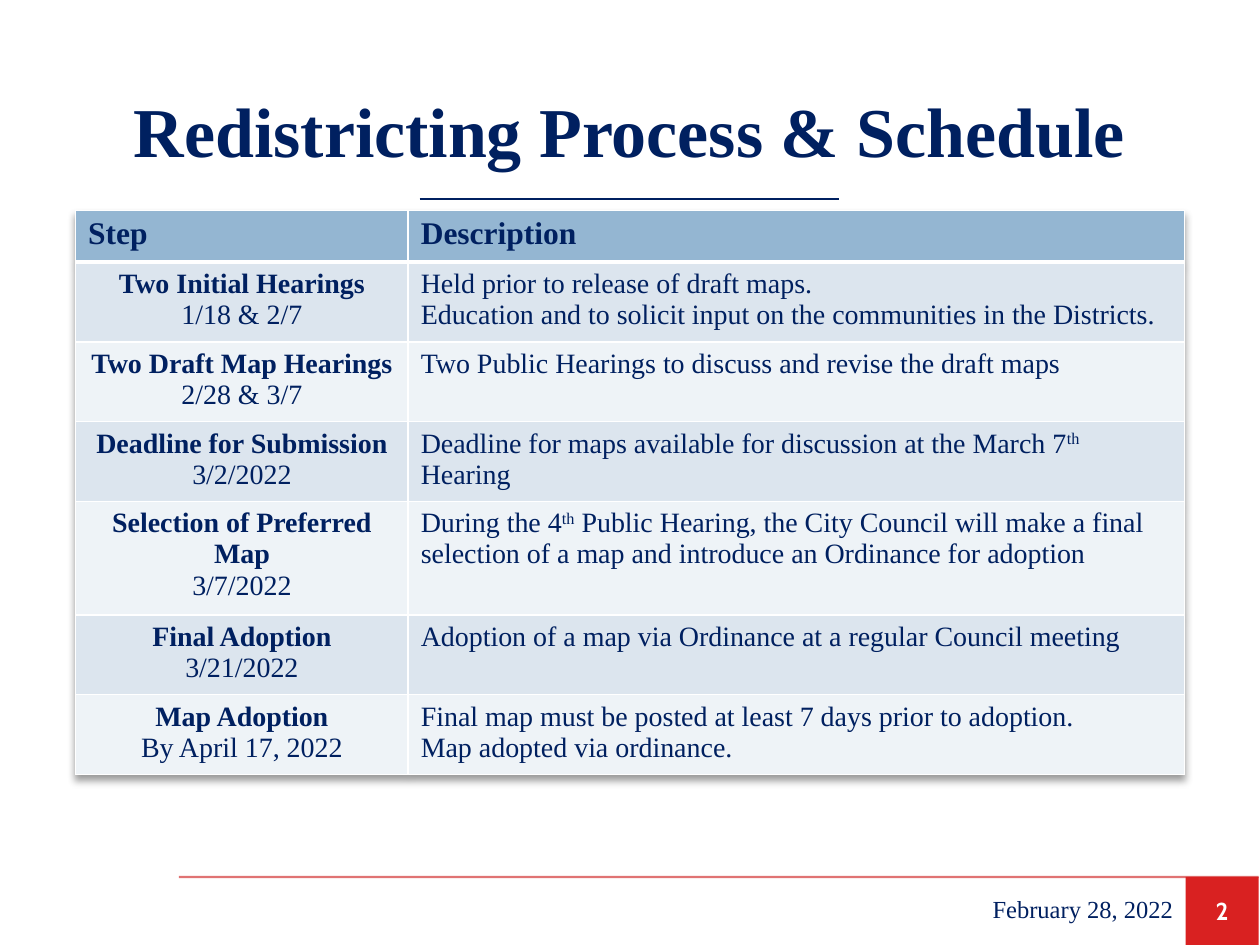
from lxml import etree
from pptx import Presentation
from pptx.dml.color import RGBColor
from pptx.enum.shapes import MSO_CONNECTOR as Connector, MSO_SHAPE as Shape
from pptx.enum.text import MSO_ANCHOR as Anchor, PP_ALIGN as Align
from pptx.oxml import parse_xml
from pptx.oxml.ns import nsdecls, qn
from pptx.util import Inches, Pt

COLORS = {
    "navy": "002060", "white": "FFFFFF", "red": "D92121", "rule": "C80000",
    "header": "94B6D2", "odd": "DCE5EE", "even": "EEF3F7",
}
SERIF = "Times New Roman"

# Each step: name, date, description paragraphs; ^ marks superscript
STEPS = [
    ("Two Initial Hearings", "1/18 & 2/7",
     ["Held prior to release of draft maps.",
      "Education and to solicit input on the communities in the Districts."]),
    ("Two Draft Map Hearings", "2/28 & 3/7",
     ["Two Public Hearings to discuss and revise the draft maps"]),
    ("Deadline for Submission", "3/2/2022",
     ["Deadline for maps available for discussion at the March 7^th^ Hearing"]),
    ("Selection of Preferred Map", "3/7/2022",
     ["During the 4^th^ Public Hearing, the City Council will make a final "
      "selection of a map and introduce an Ordinance for adoption"]),
    ("Final Adoption", "3/21/2022",
     ["Adoption of a map via Ordinance at a regular Council meeting"]),
    ("Map Adoption", "By April 17, 2022",
     ["Final map must be posted at least 7 days prior to adoption.",
      "Map adopted via ordinance."]),
]
ROW_HEIGHTS = [0.41, 0.59, 0.59, 0.59, 0.84, 0.59, 0.59]
COLUMN_WIDTHS = [2.64, 6.16]


def rgb(name):
    return RGBColor.from_string(COLORS[name])


class SlideBuilder:
    def __init__(self, slide):
        self.slide = slide
        self.format = {"name": SERIF, "size": Pt(16), "bold": False}

    def fill_text(self, frame, lines, align=Align.LEFT, color="navy"):
        """Fill a text frame with (text, format changes) paragraphs."""
        frame.word_wrap = True
        for index, (text, changes) in enumerate(lines):
            paragraph = frame.paragraphs[0] if index == 0 else frame.add_paragraph()
            paragraph.alignment = align
            for part, piece in enumerate(text.split("^")):
                run = paragraph.add_run()
                run.text = piece
                for key, value in {**self.format, **changes}.items():
                    setattr(run.font, key, value)
                run.font.color.rgb = rgb(color)
                if part % 2:
                    run._r.get_or_add_rPr().set("baseline", "30000")

    def text(self, box, text, align, **changes):
        shape = self.slide.shapes.add_textbox(*map(Inches, box))
        shape.text_frame.vertical_anchor = Anchor.MIDDLE
        self.fill_text(shape.text_frame, [(text, changes)], align)

    def badge(self, box, text, **changes):
        shape = self.slide.shapes.add_shape(Shape.RECTANGLE, *map(Inches, box))
        shape.shadow.inherit = False
        shape.fill.solid()
        shape.fill.fore_color.rgb = rgb("red")
        shape.line.fill.background()
        shape.text_frame.vertical_anchor = Anchor.MIDDLE
        self.fill_text(shape.text_frame, [(text, changes)], Align.CENTER, "white")

    def line(self, left, right, y, color, width, opacity=100):
        line = self.slide.shapes.add_connector(
            Connector.STRAIGHT, Inches(left), Inches(y), Inches(right), Inches(y))
        line.line.color.rgb = rgb(color)
        line.line.width = Pt(width)
        properties = line._element.spPr
        etree.SubElement(properties, qn("a:effectLst"))
        if opacity < 100:
            fill_color = properties.find(".//" + qn("a:srgbClr"))
            etree.SubElement(fill_color, qn("a:alpha")).set("val", str(opacity * 1000))

    def table(self, left, top, widths, heights):
        frame = self.slide.shapes.add_table(
            len(heights), len(widths), Inches(left), Inches(top),
            Inches(sum(widths)), Inches(sum(heights)))
        table = frame.table
        for column, width in zip(table.columns, widths):
            column.width = Inches(width)
        for row, height in zip(table.rows, heights):
            row.height = Inches(height)
        # Soft shadow below the table
        table._tbl.tblPr.insert(0, parse_xml(
            f'<a:effectLst {nsdecls("a")}><a:outerShdw blurRad="50800" dist="38100" '
            'dir="5400000" algn="t" rotWithShape="0"><a:prstClr val="black">'
            '<a:alpha val="40000"/></a:prstClr></a:outerShdw></a:effectLst>'))
        return table

    def cell(self, cell, lines, fill, align=Align.LEFT, top=1, bottom=1):
        properties = cell._tc.get_or_add_tcPr()
        for side, width in zip("LRTB", (1, 1, top, bottom)):
            properties.append(parse_xml(
                f'<a:ln{side} {nsdecls("a")} w="{Pt(width)}"><a:solidFill>'
                f'<a:srgbClr val="{COLORS["white"]}"/></a:solidFill></a:ln{side}>'))
        cell.fill.solid()
        cell.fill.fore_color.rgb = rgb(fill)
        self.fill_text(cell.text_frame, lines, align)


def main():
    presentation = Presentation()
    presentation.slide_width = Inches(10)
    presentation.slide_height = Inches(7.5)
    builder = SlideBuilder(presentation.slides.add_slide(presentation.slide_layouts[6]))

    # Footer rule and page number
    builder.line(1.42, 9.99, 6.96, "rule", 1.25, opacity=55)
    builder.badge((9.41, 6.96, 0.58, 0.54), "2", name="Cabin", size=Pt(14), bold=True)

    # Title
    builder.text((0.37, 0.49, 9.25, 1.08), "Redistricting Process & Schedule",
                 Align.CENTER, size=Pt(40), bold=True)
    builder.line(3.33, 6.66, 1.58, "navy", 0.75)

    # Schedule table
    table = builder.table(0.6, 1.67, COLUMN_WIDTHS, ROW_HEIGHTS)
    for column, heading in enumerate(("Step", "Description")):
        builder.cell(table.cell(0, column),
                     [(heading, {"size": Pt(18), "bold": True})], "header", bottom=3)
    for row, (step, date, description) in enumerate(STEPS, start=1):
        fill = "odd" if row % 2 else "even"
        top = 3 if row == 1 else 1
        builder.cell(table.cell(row, 0), [(step, {"bold": True}), (date, {})],
                     fill, Align.CENTER, top=top)
        builder.cell(table.cell(row, 1), [(text, {}) for text in description],
                     fill, top=top)

    # Date
    builder.text((6.49, 7.01, 2.92, 0.4), "February 28, 2022", Align.RIGHT, size=Pt(14))

    presentation.save("out.pptx")


if __name__ == "__main__":
    main()
